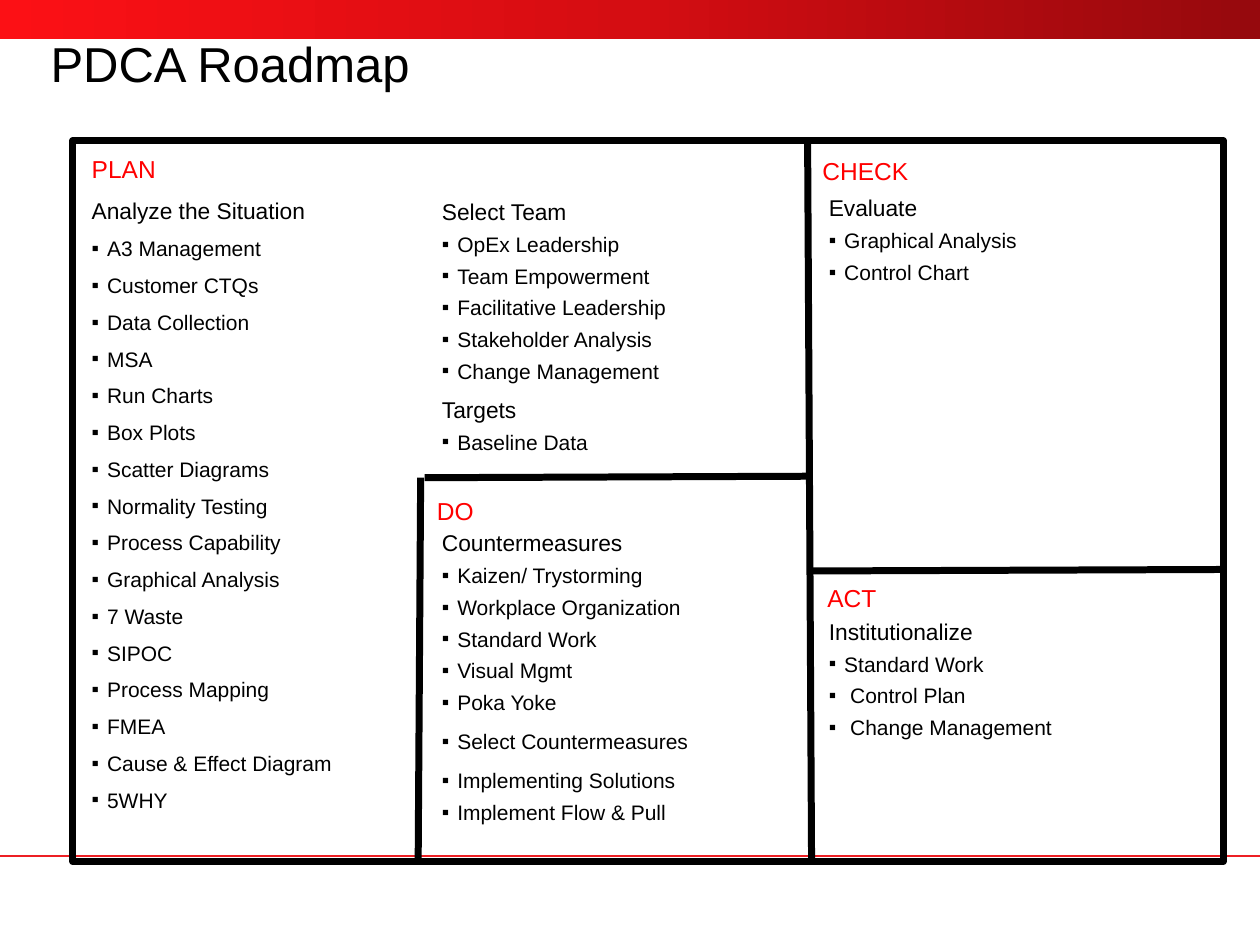
import copy

import lxml.etree
import pptx
import pptx.dml.color
import pptx.enum.shapes
import pptx.oxml.ns
import pptx.util

Cm = pptx.util.Cm
Pt = pptx.util.Pt
qn = pptx.oxml.ns.qn


def color(value):
    return pptx.dml.color.RGBColor.from_string(value)


def add_text(place, rows, margins=(0.25, 0.13)):
    """Add a text box; each row is text, paragraph format, font format, font colour, bullet indent."""
    box = slide.shapes.add_textbox(*[Cm(length) for length in place])
    frame = box.text_frame
    frame.word_wrap = True
    frame.margin_left = frame.margin_right = Cm(margins[0])
    frame.margin_top = frame.margin_bottom = Cm(margins[1])
    for number, (text, layout, font, text_color, indent) in enumerate(rows):
        para = frame.add_paragraph() if number else frame.paragraphs[0]
        if indent:
            properties = para._p.get_or_add_pPr()
            properties.set("marL", str(Cm(indent)))
            properties.set("indent", str(-Cm(indent)))
            lxml.etree.SubElement(properties, qn("a:buFont")).set("typeface", "Arial")
            lxml.etree.SubElement(properties, qn("a:buChar")).set("char", "▪")
        for name, value in layout.items():
            setattr(para, name, value)
        span = para.add_run()
        span.text = text
        for name, value in font.items():
            setattr(span.font, name, value)
        span.font.color.rgb = color(text_color)


deck = pptx.Presentation()
deck.slide_width, deck.slide_height = Cm(25.4), Cm(19.05)
slide = deck.slides.add_slide(deck.slide_layouts[6])
rectangle = pptx.enum.shapes.MSO_SHAPE.RECTANGLE

# Red gradient band along the top
band = slide.shapes.add_shape(rectangle, 0, 0, Cm(25.4), Cm(0.79))
band.shadow.inherit = False
band.line.fill.background()
band.fill.gradient()
band.fill.gradient_angle = 180
first_stop = next(band._element.iter(qn("a:gs")))
first_stop.addnext(copy.deepcopy(first_stop))
stops = [(0, "96090D"), (0.5, "D50D12"), (1, "FC1015")]
for stop, (position, stop_color) in zip(band.fill.gradient_stops, stops):
    stop.position = position
    stop.color.rgb = color(stop_color)

# Roadmap frame, above the footer rule and below the dividers
lines = [
    (0, 17.25, 25.4, 17.25, "ED1F24", 1),         # footer rule
    (16.28, 2.79, 16.36, 17.3, "000000", 4),      # left of CHECK and ACT
    (8.56, 9.63, 16.31, 9.6, "000000", 4),        # above DO
    (16.36, 11.51, 24.61, 11.48, "000000", 4),    # above ACT
    (8.43, 17.3, 8.48, 9.63, "000000", 4),        # left of DO
]
for number, (x1, y1, x2, y2, line_color, width) in enumerate(lines):
    line = slide.shapes.add_connector(
        pptx.enum.shapes.MSO_CONNECTOR.STRAIGHT, Cm(x1), Cm(y1), Cm(x2), Cm(y2))
    line.line.color.rgb = color(line_color)
    line.line.width = Pt(width)
    lxml.etree.SubElement(line._element.spPr, qn("a:effectLst"))
    if number == 0:
        frame_box = slide.shapes.add_shape(rectangle, Cm(1.47), Cm(2.84), Cm(23.19), Cm(14.53))
        frame_box.shadow.inherit = False
        frame_box.fill.background()
        frame_box.line.color.rgb = color("000000")
        frame_box.line.width = Pt(4)

# Title
title_font = {"name": "Arial", "size": Pt(28)}
add_text((1.02, 0.81, 23.9, 2.34),
         [("PDCA Roadmap", {"line_spacing": 0.9}, title_font, "000000", 0)], margins=(0, 0))

# Phase names
phase_font = {"name": "Arial", "size": Pt(14)}
phases = [("PLAN", 1.6, 2.97), ("DO", 8.56, 9.86), ("CHECK", 16.33, 3.02), ("ACT", 16.43, 11.63)]
for phase, left, top in phases:
    add_text((left, top, 6.4, 0.84), [(phase, {}, phase_font, "FF0000", 0)])

# Topic lists: place, line spacing, heading, items
topics = [
    ((1.6, 3.84, 6.81, 13.56), 1.0, "Analyze the Situation",
     ["A3 Management", "Customer CTQs", "Data Collection", "MSA", "Run Charts", "Box Plots",
      "Scatter Diagrams", "Normality Testing", "Process Capability", "Graphical Analysis",
      "7 Waste", "SIPOC", "Process Mapping", "FMEA", "Cause & Effect Diagram", "5WHY"]),
    ((8.66, 3.96, 7.14, 3.94), 0.8, "Select Team",
     ["OpEx Leadership", "Team Empowerment", "Facilitative Leadership",
      "Stakeholder Analysis", "Change Management"]),
    ((8.66, 7.95, 7.14, 1.96), 0.8, "Targets", ["Baseline Data"]),
    ((8.66, 10.64, 7.14, 6.5), 0.8, "Countermeasures",
     ["Kaizen/ Trystorming", "Workplace Organization", "Standard Work", "Visual Mgmt",
      "Poka Yoke", "Select Countermeasures", "Implementing Solutions",
      "Implement Flow & Pull"]),
    ((16.46, 3.89, 8.13, 6.73), 0.8, "Evaluate", ["Graphical Analysis", "Control Chart"]),
    ((16.46, 12.42, 7.65, 3.91), 0.8, "Institutionalize",
     ["Standard Work", "Control Plan", "Change Management"]),
]
loose_items = ("Select Countermeasures", "Implementing Solutions")
heading_font = {"name": "Arial", "size": Pt(13)}
item_font = {"name": "Arial", "size": Pt(12)}
for place, spacing, heading, items in topics:
    rows = [(heading, {"line_spacing": spacing}, heading_font, "000000", 0)]
    for number, item in enumerate(items):
        layout = {"line_spacing": 1.1 if item in loose_items else spacing,
                  "space_before": Pt(6.6)}
        indent = 0.43 if heading == "Institutionalize" and number else 0.31
        rows.append((item, layout, item_font, "000000", indent))
    add_text(place, rows)

deck.save("out.pptx")
